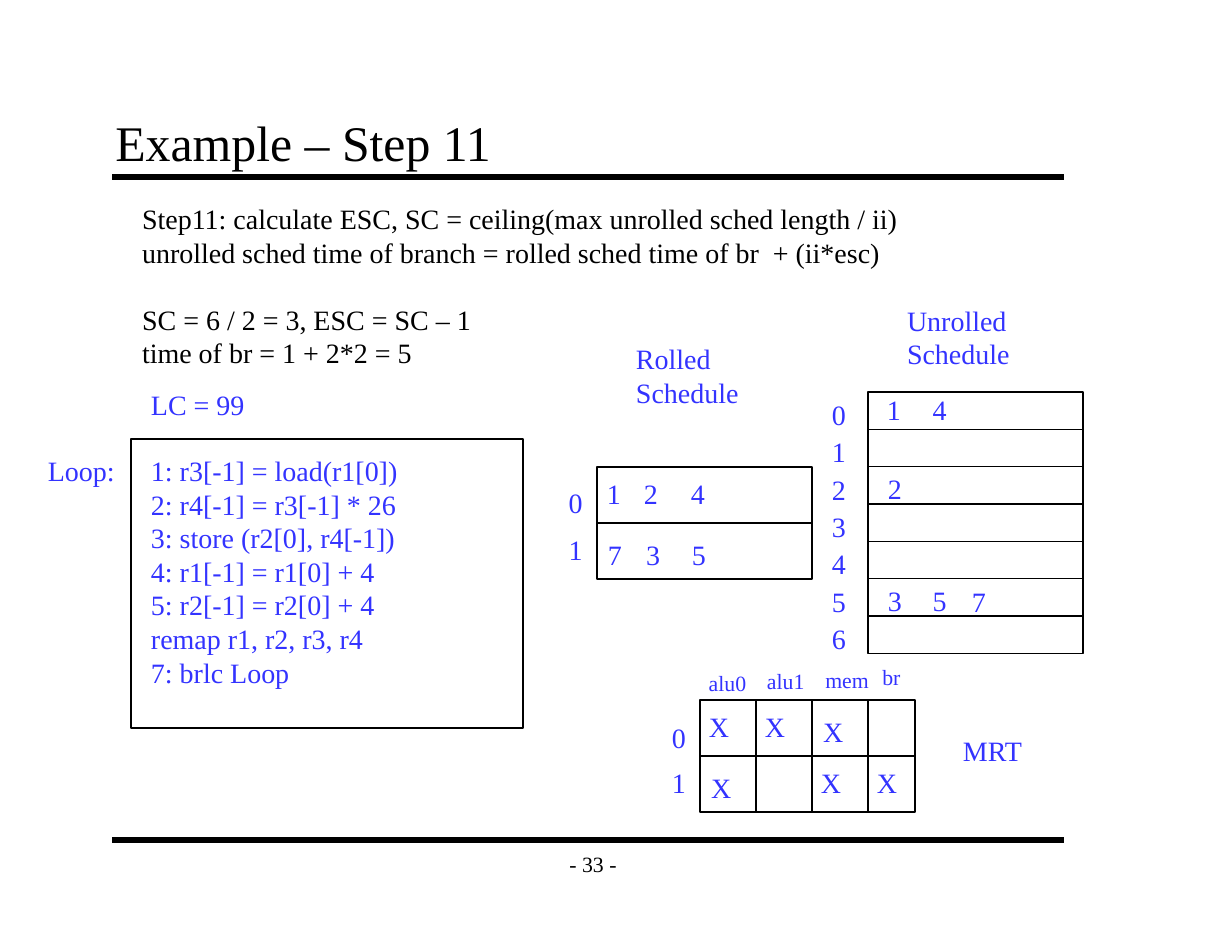
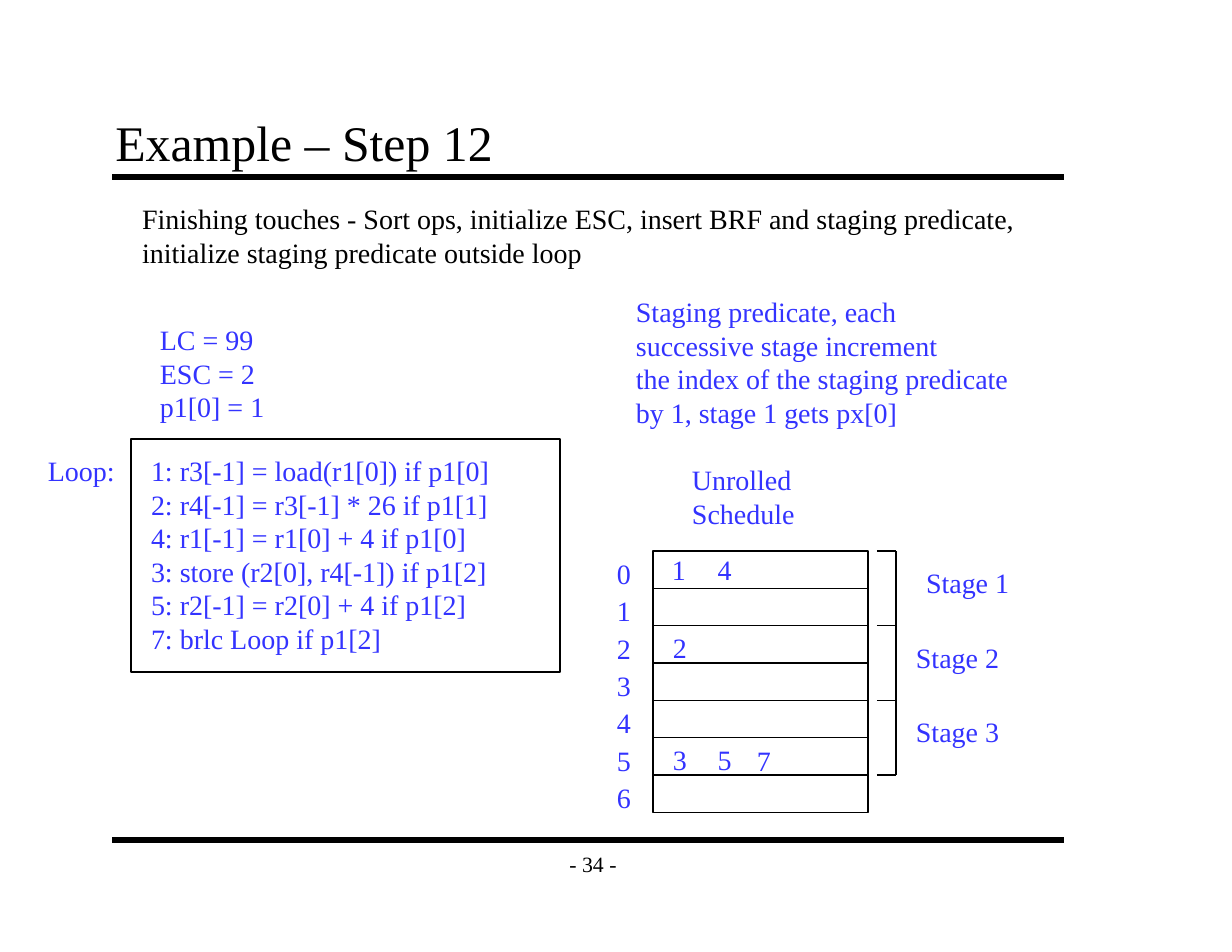
from pptx import Presentation
from pptx.dml.color import RGBColor
from pptx.enum.shapes import MSO_CONNECTOR, MSO_SHAPE
from pptx.enum.text import MSO_ANCHOR, MSO_AUTO_SIZE, PP_ALIGN
from pptx.oxml.ns import qn
from pptx.util import Inches, Pt
from lxml.etree import SubElement

BLACK = RGBColor(0x00, 0x00, 0x00)
BLUE = RGBColor(0x33, 0x33, 0xFF)
WHITE = RGBColor(0xFF, 0xFF, 0xFF)
FONT = "Times New Roman"
DIGIT_WIDTH = 0.33
GRID_WIDTH = 1.92
CYCLE_COUNT = 7
CYCLE_HEIGHT = 1 / 3
STAGE_HEIGHT = 2 * CYCLE_HEIGHT


class Deck:
    """Holds the shared style and the slide being filled."""

    def __init__(self):
        self.presentation = Presentation()
        self.presentation.slide_width = Inches(11)
        self.presentation.slide_height = Inches(8.5)
        self.slide = None

    def new_slide(self, title, number):
        self.slide = self.presentation.slides.add_slide(
            self.presentation.slide_layouts[5])
        self.slide.background.fill.solid()
        self.slide.background.fill.fore_color.rgb = WHITE

        # Bands and page number
        for band_y in (1.58, 7.5):
            self.line(1, band_y, 9.5, band_y, weight=4)
        page = self.text(4.92, 7.5, 0.75, [f"- {number} -"], BLACK, 14)
        page.height = Inches(0.42)
        page.text_frame.auto_size = MSO_AUTO_SIZE.NONE
        page.text_frame.vertical_anchor = MSO_ANCHOR.MIDDLE
        page.text_frame.paragraphs[0].alignment = PP_ALIGN.CENTER
        self.set_insets(page.text_frame)

        # Title
        heading = self.slide.shapes.title
        heading.left, heading.top = Inches(0.92), Inches(0.92)
        heading.width, heading.height = Inches(8.5), Inches(0.67)
        frame = heading.text_frame
        frame.text = title
        frame.auto_size = MSO_AUTO_SIZE.NONE
        frame.vertical_anchor = MSO_ANCHOR.BOTTOM
        self.set_insets(frame)
        frame.paragraphs[0].alignment = PP_ALIGN.LEFT
        self.set_font(frame.paragraphs[0], BLACK, 32)

    @staticmethod
    def set_insets(frame):
        frame.margin_left = frame.margin_right = Inches(0.11)
        frame.margin_top = frame.margin_bottom = Inches(0.06)

    @staticmethod
    def set_font(paragraph, color, size):
        paragraph.font.name = FONT
        paragraph.font.size = Pt(size)
        paragraph.font.color.rgb = color

    def text(self, left, top, width, lines, color=BLUE, size=18):
        height = 0.1 + len(lines) * size / 60
        box = self.slide.shapes.add_textbox(
            Inches(left), Inches(top), Inches(width), Inches(height))
        frame = box.text_frame
        frame.word_wrap = False
        frame.auto_size = MSO_AUTO_SIZE.SHAPE_TO_FIT_TEXT
        for index, line in enumerate(lines):
            paragraph = frame.add_paragraph() if index else frame.paragraphs[0]
            paragraph.text = line
            self.set_font(paragraph, color, size)
        return box

    def line(self, x1, y1, x2, y2, weight=1):
        connector = self.slide.shapes.add_connector(
            MSO_CONNECTOR.STRAIGHT,
            Inches(x1), Inches(y1), Inches(x2), Inches(y2))
        connector.line.color.rgb = BLACK
        connector.line.width = Pt(weight)
        SubElement(connector._element.spPr, qn("a:effectLst"))
        return connector

    def frame(self, left, top, width, height):
        rectangle = self.slide.shapes.add_shape(
            MSO_SHAPE.RECTANGLE,
            Inches(left), Inches(top), Inches(width), Inches(height))
        rectangle.shadow.inherit = False
        rectangle.fill.background()
        rectangle.line.color.rgb = BLACK
        rectangle.line.width = Pt(1)
        return rectangle

    def grid(self, left, top, row_count, row_height, column_offsets=()):
        height = row_count * row_height
        outline = self.frame(left, top, GRID_WIDTH, height)
        for row in range(1, row_count):
            y = top + row * row_height
            divider = self.line(left, y, left + GRID_WIDTH, y)
            if 2 * row == row_count:
                divider.begin_connect(outline, 1)
                divider.end_connect(outline, 3)
        for offset in column_offsets:
            self.line(left + offset, top, left + offset, top + height)

    def row_numbers(self, left, top, count, step):
        for row in range(count):
            self.text(left, top + row * step, DIGIT_WIDTH, [str(row)])

    def entries(self, left, top, placed, width=DIGIT_WIDTH):
        for label, dx, dy in placed:
            self.text(left + dx, top + dy, width, [label])

    def loop(self, width, height, code_width, code):
        self.text(1.25, 4, code_width, code)
        self.frame(1.17, 3.92, width, height)
        self.text(0.33, 4, 0.8, ["Loop:"])

    def unrolled_schedule(self, left, top):
        self.grid(left, top, CYCLE_COUNT, CYCLE_HEIGHT)
        self.text(left + 0.25, top - 0.84, 1.12, ["Unrolled", "Schedule"])
        self.row_numbers(left - 0.42, top, CYCLE_COUNT, CYCLE_HEIGHT)
        self.entries(left, top, [
            ("1", 0.07, -0.04), ("4", 0.48, -0.04), ("2", 0.08, 0.66),
            ("3", 0.08, 1.66), ("5", 0.48, 1.66), ("7", 0.83, 1.67)])


def build_step_11(deck):
    deck.new_slide("Example – Step 11", 33)

    # Explanation
    explanation = deck.text(1.17, 1.75, 7.02, [
        "Step11: calculate ESC, SC = ceiling(max unrolled sched length / ii)",
        "unrolled sched time of branch = rolled sched time of br  + (ii*esc)",
        "SC = 6 / 2 = 3, ESC = SC – 1",
        "time of br = 1 + 2*2 = 5"], BLACK)
    explanation.text_frame.paragraphs[2].space_before = Pt(21.5)

    # Loop code
    deck.text(1.25, 3.41, 1.04, ["LC = 99"])
    deck.loop(3.5, 2.58, 2.4, [
        "1: r3[-1] = load(r1[0])",
        "2: r4[-1] = r3[-1] * 26",
        "3: store (r2[0], r4[-1])",
        "4: r1[-1] = r1[0] + 4",
        "5: r2[-1] = r2[0] + 4",
        "remap r1, r2, r3, r4",
        "7: brlc Loop"])

    # Rolled schedule
    deck.text(5.58, 3, 1.12, ["Rolled", "Schedule"])
    deck.grid(5.33, 4.17, 2, 0.5)
    deck.row_numbers(4.98, 4.29, 2, 0.42)
    deck.entries(5.33, 4.17, [
        ("1", -0.01, 0.04), ("2", 0.32, 0.04), ("4", 0.74, 0.04),
        ("7", 0, 0.58), ("3", 0.34, 0.58), ("5", 0.75, 0.58)])

    deck.unrolled_schedule(7.75, 3.5)

    # Modulo reservation table
    deck.grid(6.25, 6.25, 2, 0.5, (0.5, 1, 1.5))
    for unit, left, top, width in [
            ("alu0", 6.23, 5.93, 0.54), ("alu1", 6.75, 5.91, 0.54),
            ("mem", 7.27, 5.9, 0.59), ("br", 7.78, 5.88, 0.36)]:
        deck.text(left, top, width, [unit], size=14)
    deck.row_numbers(5.9, 6.38, 2, 0.41)
    deck.entries(6.25, 6.25, [
        ("X", -0.02, 0.04), ("X", 0.48, 0.04), ("X", 1, 0.08),
        ("X", 0, 0.58), ("X", 0.98, 0.54), ("X", 1.48, 0.54)], width=0.38)
    deck.text(8.5, 6.5, 0.74, ["MRT"])


def build_step_12(deck):
    deck.new_slide("Example – Step 12", 34)

    # Explanation
    deck.text(1.17, 1.75, 7.99, [
        "Finishing touches - Sort ops, initialize ESC, insert BRF and "
        "staging predicate,",
        "initialize staging predicate outside loop"], BLACK)
    deck.text(5.58, 2.58, 3.53, [
        "Staging predicate, each",
        "successive stage increment",
        "the index of the staging predicate",
        "by 1, stage 1 gets px[0]"])

    # Loop code
    deck.text(1.33, 2.83, 1.13, ["LC = 99", "ESC = 2", "p1[0] = 1"])
    deck.loop(3.83, 2.08, 3.22, [
        "1: r3[-1] = load(r1[0]) if p1[0]",
        "2: r4[-1] = r3[-1] * 26 if p1[1]",
        "4: r1[-1] = r1[0] + 4 if p1[0]",
        "3: store (r2[0], r4[-1]) if p1[2]",
        "5: r2[-1] = r2[0] + 4 if p1[2]",
        "7: brlc Loop if p1[2]"])

    # Unrolled schedule with stage brackets
    schedule_top = 4.92
    deck.unrolled_schedule(5.83, schedule_top)
    deck.line(7.83, schedule_top, 8, schedule_top)
    for stage, label_left in enumerate((8.17, 8.08, 8.08)):
        stage_top = schedule_top + stage * STAGE_HEIGHT
        stage_bottom = stage_top + STAGE_HEIGHT
        deck.line(8, stage_top, 8, stage_bottom)
        deck.line(7.83, stage_bottom, 8, stage_bottom)
        deck.text(label_left, stage_top + 0.08, 0.94, [f"Stage {stage + 1}"])


def main():
    deck = Deck()
    build_step_11(deck)
    build_step_12(deck)
    deck.presentation.save("out.pptx")


if __name__ == "__main__":
    main()
